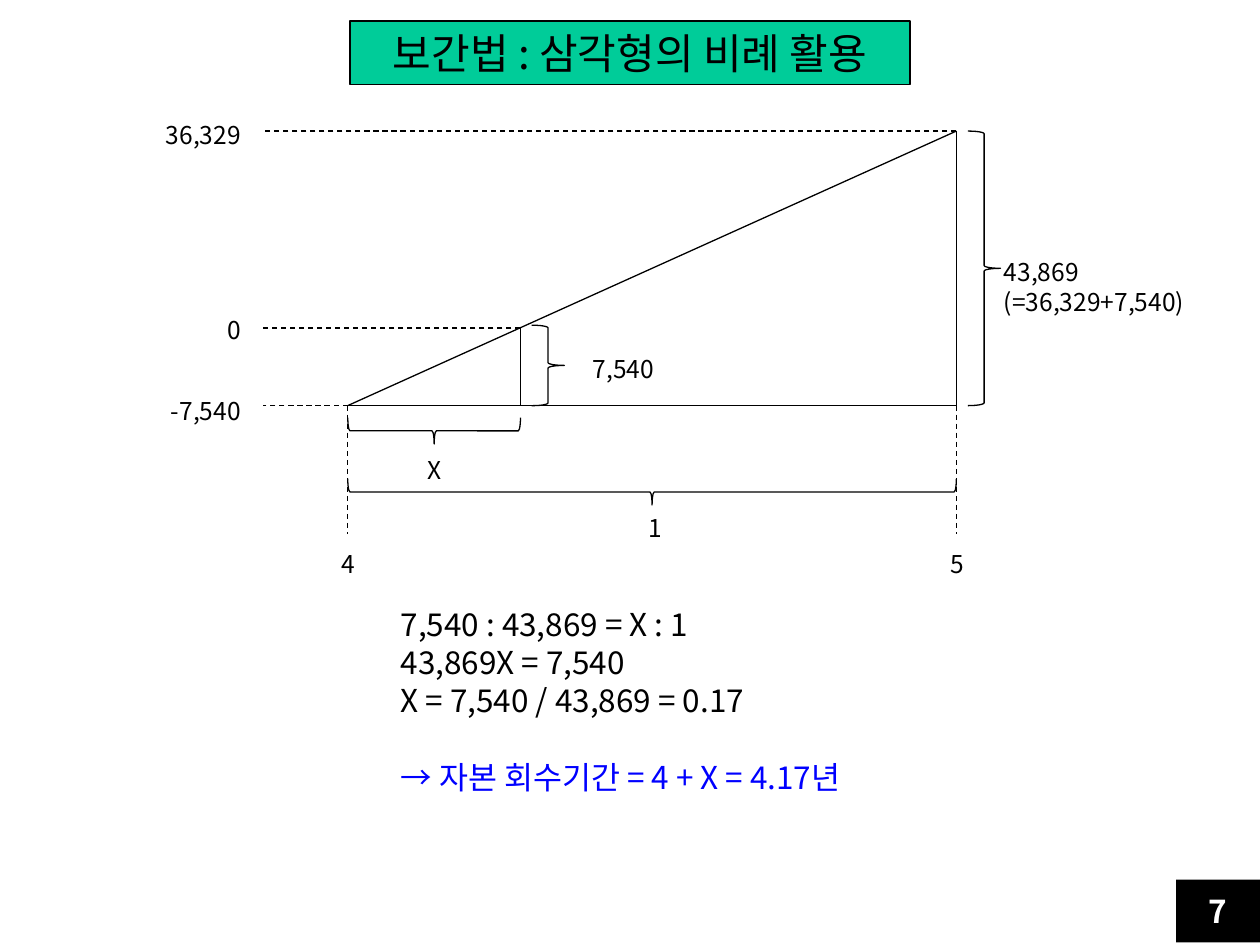
"""Build a slide that explains interpolation with similar triangles."""
from lxml import etree
from pptx import Presentation
from pptx.dml.color import RGBColor
from pptx.enum.dml import MSO_LINE
from pptx.enum.shapes import MSO_CONNECTOR, MSO_SHAPE
from pptx.enum.text import MSO_ANCHOR, PP_ALIGN
from pptx.oxml.ns import qn
from pptx.util import Pt

STRAIGHT = MSO_CONNECTOR.STRAIGHT
RECT, BRACE = MSO_SHAPE.RECTANGLE, MSO_SHAPE.RIGHT_BRACE
DASH = MSO_LINE.DASH
LEFT, MID, RIGHT = PP_ALIGN.LEFT, PP_ALIGN.CENTER, PP_ALIGN.RIGHT
TOP, MIDDLE = MSO_ANCHOR.TOP, MSO_ANCHOR.MIDDLE
FONT = "Noto Sans CJK KR"
BLACK, WHITE, GREEN, BLUE = "000000", "FFFFFF", "00CC99", "0000FF"
LEADING = 1.21

X4, X5, XZERO = 198.7, 546.5, 297.4
YHIGH, YZERO, YBASE = 74.9, 187.5, 231.8
XAXIS, YAXIS = 150.5, 305.3

TITLE = "보간법 : 삼각형의 비례 활용"
SOLID = [
    (X4, YBASE, X5, YBASE),
    (X5, YBASE, X5, YHIGH),
    (X5, YHIGH, X4, YBASE),
    (XZERO, YBASE, XZERO, YZERO),
]
DASHED = [
    (X4, YBASE, X4, YAXIS),
    (X5, YBASE, X5, YAXIS),
    (X4, YBASE, XAXIS, YBASE),
    (X5, YHIGH, XAXIS, YHIGH),
    (XZERO, YZERO, XAXIS, YZERO),
]
SIDE = [(553, YHIGH, YBASE), (303.8, 185.8, YBASE)]
UNDER = [(X4, XZERO, 238.7), (X4, X5, 273.6)]
LABELS = [
    (["4"], 187.2, 310.3, 23, 24.5, RIGHT),
    (["5"], 535, 310.3, 23, 24.5, RIGHT),
    (["-7,540"], 86.4, 222.5, 58.3, 24.5, RIGHT),
    (["36,329"], 86.4, 64.8, 58.3, 24.5, RIGHT),
    (["0"], 121.7, 176.4, 23, 20.2, RIGHT),
    (["7,540"], 330.5, 198.7, 50.4, 24.5, RIGHT),
    (["X"], 236.2, 256.3, 23, 20.2, RIGHT),
    (["1"], 362.9, 289.4, 22.3, 19.4, RIGHT),
    (["43,869", "(=36,329+7,540)"], 566.6, 143.3, 118.8, 41, LEFT),
]
STEPS = [
    "7,540 : 43,869 = X : 1",
    "43,869X = 7,540",
    "X = 7,540 / 43,869 = 0.17",
    "→ 자본 회수기간 = 4 + X = 4.17년",
]


def tint(text):
    return RGBColor.from_string(text)


def write(shape, lines, size, align, hue=BLACK, bold=False, anchor=TOP):
    frame = shape.text_frame
    frame.text = "\n".join(lines)
    frame.word_wrap = False
    frame.vertical_anchor = anchor
    for para in frame.paragraphs:
        para.alignment = align
        para.line_spacing = Pt(round(size * LEADING, 1))
        for run in para.runs:
            run.font.size = Pt(size)
            run.font.bold = bold
            run.font.color.rgb = tint(hue)
            run.font.name = FONT
            east = etree.SubElement(run._r.get_or_add_rPr(), qn("a:ea"))
            east.set("typeface", FONT)
    return frame.paragraphs


def ink(shape):
    shape.line.color.rgb = tint(BLACK)
    shape.line.width = Pt(0.75)


def paint(shape, hue):
    shape.fill.solid()
    shape.fill.fore_color.rgb = tint(hue)


def draw(slide, ends, dash=None):
    line = slide.shapes.add_connector(STRAIGHT, *map(Pt, ends))
    ink(line)
    line.line.dash_style = dash
    etree.SubElement(line._element.spPr, qn("a:effectLst"))


def brace(slide, midx, midy, wide, span, turn=0):
    box = (midx - wide / 2, midy - span / 2, wide, span)
    shape = slide.shapes.add_shape(BRACE, *map(Pt, box))
    shape.rotation = turn
    shape.shadow.inherit = False
    shape.fill.background()
    ink(shape)


def label(slide, lines, box, size, align):
    shape = slide.shapes.add_textbox(*map(Pt, box))
    return write(shape, lines, size, align)


def main():
    deck = Presentation()
    deck.slide_width, deck.slide_height = Pt(720), Pt(540)
    slide = deck.slides.add_slide(deck.slide_layouts[5])

    title = slide.shapes.title
    title.left, title.top = Pt(200), Pt(12)
    title.width, title.height = Pt(320), Pt(36.5)
    paint(title, GREEN)
    ink(title)
    write(title, [TITLE], 24, MID)

    for ends in SOLID:
        draw(slide, ends)
    for ends in DASHED:
        draw(slide, ends, DASH)
    for left, top, end in SIDE:
        brace(slide, left + 9.4, (top + end) / 2, 18.7, end - top)
    for left, end, top in UNDER:
        brace(slide, (left + end) / 2, top + 7.5, 15, end - left, 90)
    for lines, *box, align in LABELS:
        label(slide, lines, box, 14, align)

    paras = label(slide, STEPS, (221.8, 342, 296.6, 116.6), 18, LEFT)
    paras[-1].space_before = Pt(21.8)
    paras[-1].runs[0].font.color.rgb = tint(BLUE)

    page = slide.shapes.add_shape(RECT, Pt(672), Pt(502.6), Pt(48), Pt(36))
    page.shadow.inherit = False
    page.line.fill.background()
    paint(page, BLACK)
    write(page, ["7"], 18, MID, WHITE, True, MIDDLE)
    deck.save("out.pptx")


if __name__ == "__main__":
    main()
